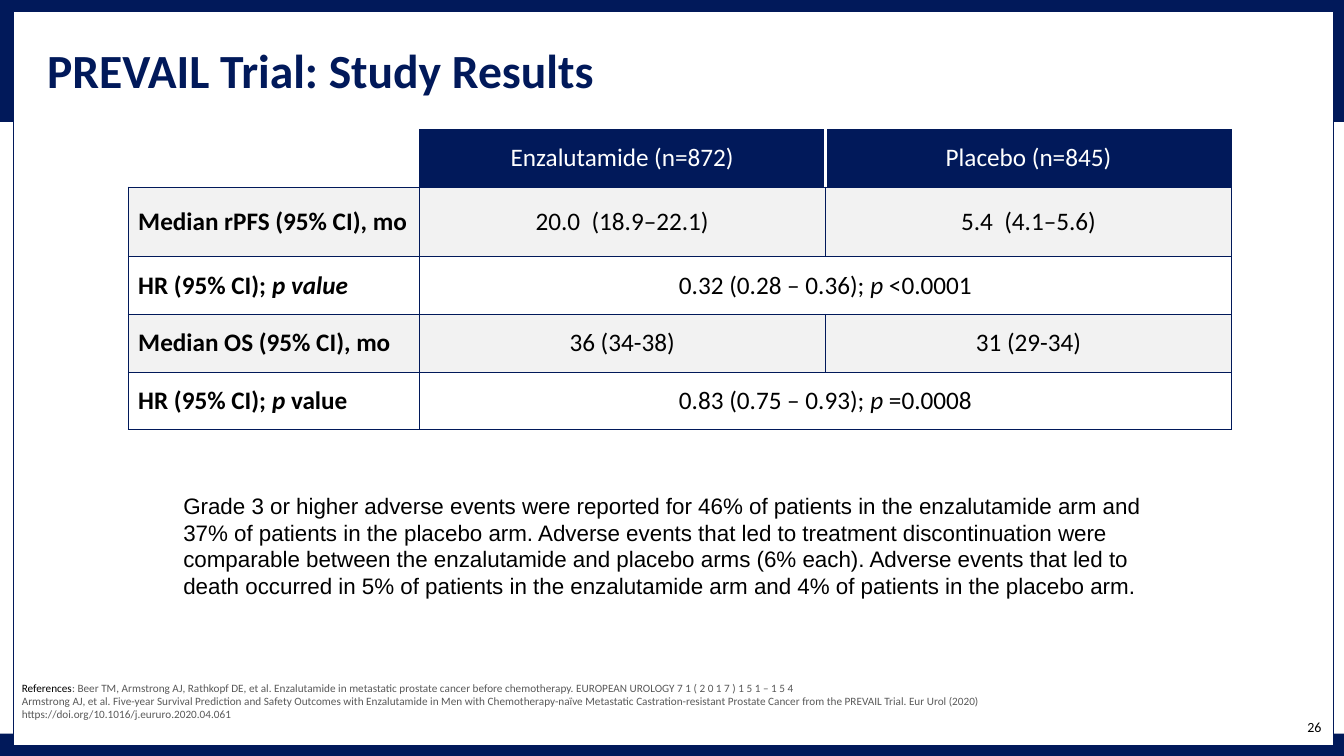
from dataclasses import dataclass

from lxml.etree import SubElement
from pptx import Presentation
from pptx.dml.color import RGBColor
from pptx.enum.shapes import MSO_SHAPE
from pptx.enum.text import MSO_ANCHOR, PP_ALIGN
from pptx.oxml.ns import qn
from pptx.util import Cm, Pt


@dataclass(frozen=True)
class Theme:
    navy: str = "01195A"
    white: str = "FFFFFF"
    band: str = "F2F2F2"
    black: str = "000000"
    grey: str = "595959"
    heading_font: str = "Calibri"
    body_font: str = "Arial"
    title_size: float = 34
    table_size: float = 18
    body_size: float = 16
    number_size: float = 10
    reference_size: float = 8
    border: float = 0.5
    header_divider: float = 2.25


THEME = Theme()


@dataclass(frozen=True)
class Area:
    left: float
    top: float
    width: float
    height: float

    def lengths(self) -> tuple:
        return Cm(self.left), Cm(self.top), Cm(self.width), Cm(self.height)


@dataclass(frozen=True)
class Panel:
    area: Area
    fill: str
    outlined: bool = False


@dataclass(frozen=True)
class Span:
    text: str
    size: float
    color: str = THEME.black
    font: str = THEME.heading_font
    bold: bool = False
    italic: bool = False


@dataclass(frozen=True)
class Note:
    area: Area
    spans: tuple
    align: PP_ALIGN = PP_ALIGN.LEFT
    anchor: MSO_ANCHOR = MSO_ANCHOR.TOP
    left_inset: float = 0.25
    right_inset: float = 0.25
    line_spacing: float | None = None


@dataclass(frozen=True)
class ResultRow:
    label: tuple
    values: tuple  # a single value covers both trial arms
    fill: str


def label(text: str, italic: bool = False) -> Span:
    return Span(text, THEME.table_size, bold=True, italic=italic)


def value(text: str, italic: bool = False) -> Span:
    return Span(text, THEME.table_size, italic=italic)


def header(text: str) -> Span:
    return Span(text, THEME.table_size, THEME.white)


def reference(text: str, color: str = THEME.grey) -> Span:
    return Span(text, THEME.reference_size, color)


PANELS = (
    Panel(Area(0, 0, 33.87, 3.07), THEME.navy),
    Panel(Area(0, 18.49, 33.87, 0.56), THEME.navy),
    Panel(Area(0.33, 0.28, 33.27, 18.49), THEME.white, outlined=True),
)

NOTES = (
    Note(Area(1.19, 0.36, 31.9, 3),
         (Span("PREVAIL Trial: Study Results", THEME.title_size, THEME.navy, bold=True),),
         anchor=MSO_ANCHOR.MIDDLE, left_inset=0, line_spacing=34),
    Note(Area(4.37, 12.27, 25.12, 3.66),
         (Span("Grade 3 or higher adverse events were reported for 46% of patients in the "
               "enzalutamide arm and 37% of patients in the placebo arm. Adverse events that "
               "led to treatment discontinuation were comparable between the enzalutamide and "
               "placebo arms (6% each). Adverse events that led to death occurred in 5% of "
               "patients in the enzalutamide arm and 4% of patients in the placebo arm.",
               THEME.body_size, font=THEME.body_font),)),
    Note(Area(32.59, 17.88, 0.71, 0.89), (Span("26", THEME.number_size),),
         align=PP_ALIGN.RIGHT, anchor=MSO_ANCHOR.MIDDLE, right_inset=0),
    Note(Area(0.3, 17.04, 26.44, 0.94),
         (reference("References", THEME.black),
          reference(": Beer TM, Armstrong AJ, Rathkopf DE, et al. Enzalutamide in metastatic "
                    "prostate cancer before chemotherapy. EUROPEAN UROLOGY "
                    "7 1 ( 2 0 1 7 ) 1 5 1 – 1 5 4"))),
    Note(Area(0.3, 17.37, 24.74, 0.94),
         (reference("Armstrong AJ, et al. Five-year Survival Prediction and Safety Outcomes with "
                    "Enzalutamide in Men with Chemotherapy-naïve Metastatic Castration-resistant "
                    "Prostate Cancer from the PREVAIL Trial. Eur Urol (2020) "
                    "https://doi.org/10.1016/j.eururo.2020.04.061"),)),
)

TABLE_AREA = Area(3.23, 3.25, 27.81, 7.57)
COLUMN_WIDTHS = (7.33, 10.24, 10.24)
ROW_HEIGHTS = (1.46, 1.76, 1.45, 1.45, 1.45)
ARMS = ((header("Enzalutamide (n=872)"),), (header("Placebo (n=845)"),))
RESULTS = (
    ResultRow((label("Median rPFS (95% CI), mo"),),
              ((value("20.0  (18.9–22.1)"),), (value("5.4  (4.1–5.6)"),)), THEME.band),
    ResultRow((label("HR (95% CI); "), label("p value", italic=True)),
              ((value("0.32 (0.28 – 0.36); "), value("p", italic=True), value(" <0.0001")),),
              THEME.white),
    ResultRow((label("Median OS (95% CI), mo"),),
              ((value("36 (34-38)"),), (value("31 (29-34)"),)), THEME.band),
    ResultRow((label("HR (95% CI); "), label("p", italic=True), label(" value")),
              ((value("0.83 (0.75 – 0.93); "), value("p", italic=True), value(" =0.0008")),),
              THEME.white),
)


def write_spans(para, spans: tuple, align: PP_ALIGN) -> None:
    para.alignment = align
    for span in spans:
        run = para.add_run()
        run.text = span.text
        run.font.name = span.font
        run.font.size = Pt(span.size)
        run.font.bold = span.bold
        run.font.italic = span.italic
        run.font.color.rgb = RGBColor.from_string(span.color)


def draw_panel(page, panel: Panel) -> None:
    box = page.shapes.add_shape(MSO_SHAPE.RECTANGLE, *panel.area.lengths())
    box.shadow.inherit = False
    box.fill.solid()
    box.fill.fore_color.rgb = RGBColor.from_string(panel.fill)
    if panel.outlined:
        box.line.color.rgb = RGBColor.from_string(THEME.navy)
        box.line.width = Pt(0.3)
    else:
        box.line.fill.background()


def draw_note(page, note: Note) -> None:
    frame = page.shapes.add_textbox(*note.area.lengths()).text_frame
    frame.word_wrap = True
    frame.vertical_anchor = note.anchor
    frame.margin_left, frame.margin_right = Cm(note.left_inset), Cm(note.right_inset)
    para = frame.paragraphs[0]
    if note.line_spacing:
        para.line_spacing = Pt(note.line_spacing)
    write_spans(para, note.spans, note.align)


def style_cell(cell, fill: str, borders: dict) -> None:
    """Borders map a side (L, R, T, B) to its colour and width."""
    properties = cell._tc.get_or_add_tcPr()
    for side in "LRTB":
        line = SubElement(properties, qn(f"a:ln{side}"))
        if side in borders:
            color, width = borders[side]
            line.set("w", str(Pt(width)))
            SubElement(SubElement(line, qn("a:solidFill")), qn("a:srgbClr"), val=color)
        else:
            SubElement(line, qn("a:noFill"))
    cell.fill.solid()
    cell.fill.fore_color.rgb = RGBColor.from_string(fill)
    cell.vertical_anchor = MSO_ANCHOR.MIDDLE


def draw_results(page) -> None:
    table = page.shapes.add_table(
        len(ROW_HEIGHTS), len(COLUMN_WIDTHS), *TABLE_AREA.lengths()).table
    table.horz_banding = table.first_row = False
    for column, width in zip(table.columns, COLUMN_WIDTHS):
        column.width = Cm(width)
    for row, height in zip(table.rows, ROW_HEIGHTS):
        row.height = Cm(height)

    # Header row
    thin, divider = (THEME.navy, THEME.border), (THEME.white, THEME.header_divider)
    style_cell(table.cell(0, 0), THEME.white, {"B": thin})
    for column, (spans, side) in enumerate(zip(ARMS, "RL"), start=1):
        cell = table.cell(0, column)
        style_cell(cell, THEME.navy, {side: divider, "B": thin})
        write_spans(cell.text_frame.paragraphs[0], spans, PP_ALIGN.CENTER)

    # Result rows
    for index, result in enumerate(RESULTS, start=1):
        for column in range(len(COLUMN_WIDTHS)):
            style_cell(table.cell(index, column), result.fill, dict.fromkeys("LRTB", thin))
        if len(result.values) == 1:
            table.cell(index, 1).merge(table.cell(index, 2))
        for column, spans in enumerate((result.label, *result.values)):
            align = PP_ALIGN.CENTER if column else PP_ALIGN.LEFT
            write_spans(table.cell(index, column).text_frame.paragraphs[0], spans, align)


def main() -> None:
    deck = Presentation()
    deck.slide_width, deck.slide_height = Cm(33.87), Cm(19.05)
    page = deck.slides.add_slide(deck.slide_layouts[6])
    for panel in PANELS:
        draw_panel(page, panel)
    draw_results(page)
    for note in NOTES:
        draw_note(page, note)
    deck.save("out.pptx")


if __name__ == "__main__":
    main()
